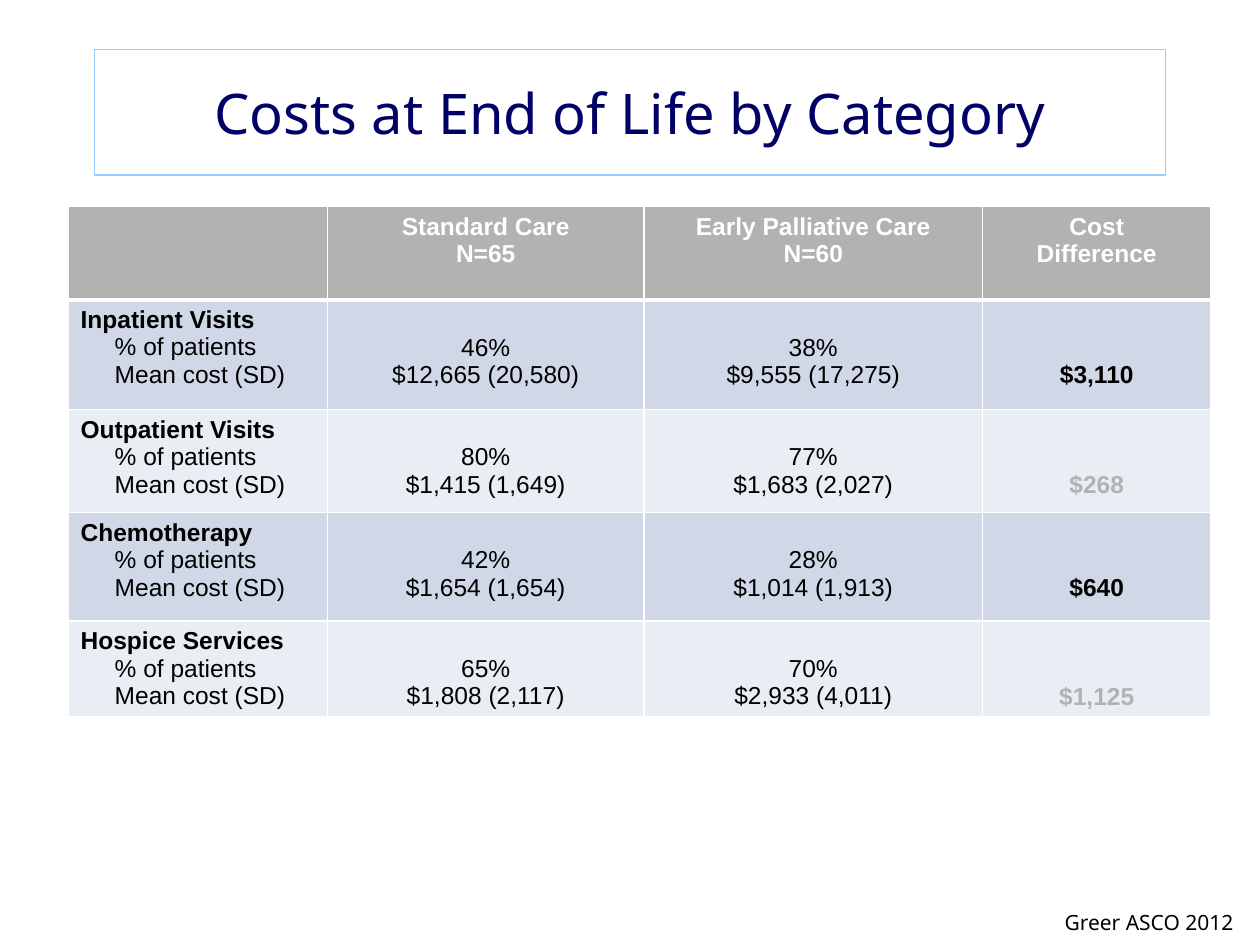
from lxml import etree
from pptx import Presentation
from pptx import util as u
from pptx.dml.color import RGBColor
from pptx.enum import text
from pptx.oxml import ns

NAVY = RGBColor(0x00, 0x00, 0x66)
SKY = RGBColor(0x99, 0xCC, 0xFF)
GREY = RGBColor(0xB2, 0xB2, 0xB2)
BLUE = RGBColor(0xD0, 0xD8, 0xE8)
PALE = RGBColor(0xE9, 0xED, 0xF4)
WHITE = RGBColor(0xFF, 0xFF, 0xFF)
BLACK = RGBColor(0, 0, 0)

LEFT, CENTER = text.PP_ALIGN.LEFT, text.PP_ALIGN.CENTER
LINE = 0.22  # height of one table text line, in inches

HEADS = [[], ["Standard Care", "N=65"], ["Early Palliative Care", "N=60"],
         ["Cost", "Difference"]]
LABELS = ["% of patients", "Mean cost (SD)"]
# Category, standard care, early palliative care, difference, its colour
COSTS = [
    ("Inpatient Visits", ["46%", "$12,665 (20,580)"],
     ["38%", "$9,555 (17,275)"], "$3,110", BLACK),
    ("Outpatient Visits", ["80%", "$1,415 (1,649)"],
     ["77%", "$1,683 (2,027)"], "$268", GREY),
    ("Chemotherapy", ["42%", "$1,654 (1,654)"],
     ["28%", "$1,014 (1,913)"], "$640", BLACK),
    ("Hospice Services", ["65%", "$1,808 (2,117)"],
     ["70%", "$2,933 (4,011)"], "$1,125", GREY),
]
COLS = [2.06, 2.51, 2.69, 1.81]
ROWS = [0.74, 0.87, 0.82, 0.86, 0.76]


def write(frame, lines, size=14, font="Arial", color=BLACK, bold=False,
          align=LEFT, indent=0, more=False):
    """Fill a text frame with lines; more=True adds to the text there."""
    for i, line in enumerate(lines):
        para = frame.add_paragraph() if more or i else frame.paragraphs[0]
        para.alignment = align
        if indent:
            para._p.get_or_add_pPr().set("marL", str(u.Inches(indent)))
        run = para.add_run()
        run.text = line
        run.font.size, run.font.name = u.Pt(size), font
        run.font.bold, run.font.color.rgb = bold, color


class Deck:
    """Holds the style and the current slide."""
    face = "Noto Sans"

    def __init__(self):
        self.prs = Presentation()
        self.prs.slide_width, self.prs.slide_height = u.Inches(10), u.Inches(7.5)
        self.slide = self.prs.slides.add_slide(self.prs.slide_layouts[5])

    def title(self, words, *box):
        shape = self.slide.shapes.title
        shape.left, shape.top, shape.width, shape.height = map(u.Inches, box)
        shape.line.color.rgb, shape.line.width = SKY, u.Pt(0.75)
        shape.text_frame.vertical_anchor = text.MSO_ANCHOR.MIDDLE
        write(shape.text_frame, [words], 32, self.face, NAVY, align=CENTER)

    def note(self, words, *box):
        frame = self.slide.shapes.add_textbox(*map(u.Inches, box)).text_frame
        frame.word_wrap = True
        write(frame, [words], 12, self.face)

    def table(self, x, y):
        grid = self.slide.shapes.add_table(
            len(ROWS), len(COLS), u.Inches(x), u.Inches(y),
            u.Inches(sum(COLS)), u.Inches(sum(ROWS))).table
        for col, width in zip(grid.columns, COLS):
            col.width = u.Inches(width)
        for row, height in zip(grid.rows, ROWS):
            row.height = u.Inches(height)
        return grid

    def cell(self, cell, fill, skip=0, top=1, low=1):
        """Style a cell whose text starts after some skipped lines."""
        props = cell._tc.get_or_add_tcPr()
        for side, width in zip("LRTB", (1, 1, top, low)):
            line = etree.SubElement(props, ns.qn(f"a:ln{side}"),
                                    w=str(u.Pt(width)))
            paint = etree.SubElement(line, ns.qn("a:solidFill"))
            etree.SubElement(paint, ns.qn("a:srgbClr"), val=str(WHITE))
        cell.fill.solid()
        cell.fill.fore_color.rgb = fill
        cell.margin_top = u.Inches(0.05 + skip * LINE)
        return cell.text_frame


def main():
    deck = Deck()
    deck.title("Costs at End of Life by Category", 0.75, 0.39, 8.5, 1)
    grid = deck.table(0.54, 1.64)

    # Header row
    for c, head in enumerate(HEADS):
        frame = deck.cell(grid.cell(0, c), GREY, low=3)
        write(frame, head, color=WHITE, bold=True, align=CENTER)

    # One row per cost category
    for r, (name, usual, early, gap, color) in enumerate(COSTS, 1):
        fill = BLUE if r % 2 else PALE
        top = 3 if r == 1 else 1
        frames = [deck.cell(grid.cell(r, c), fill, skip, top)
                  for c, skip in enumerate((0, 1, 1, 2))]
        write(frames[0], [name], bold=True)
        write(frames[0], LABELS, indent=0.27, more=True)
        write(frames[1], usual, align=CENTER)
        write(frames[2], early, align=CENTER)
        write(frames[3], [gap], color=color, bold=True, align=CENTER)

    # Source
    deck.note("Greer ASCO 2012", 8.35, 7.17, 1.61, 0.3)
    deck.prs.save("out.pptx")


if __name__ == "__main__":
    main()
